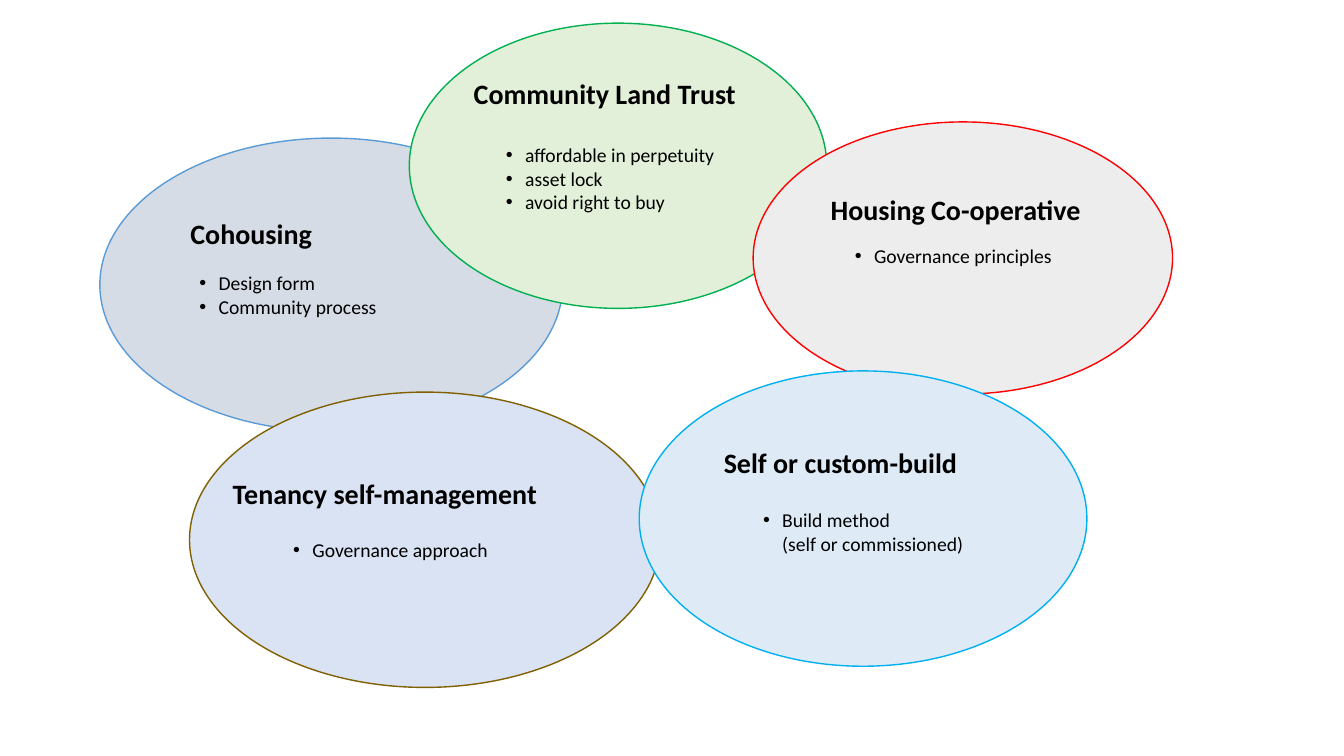
import copy
from dataclasses import dataclass

import lxml.etree
import pptx
import pptx.dml.color
import pptx.enum.shapes
import pptx.enum.text
import pptx.oxml.ns
import pptx.util

Inches = pptx.util.Inches
Pt = pptx.util.Pt
RGB = pptx.dml.color.RGBColor.from_string
qn = pptx.oxml.ns.qn


@dataclass(frozen=True)
class Theme:
    font: str = "Calibri"
    text: str = "000000"
    title_size: int = 20
    bullet_size: int = 14
    line_width: int = 1
    indent: float = 0.19
    cohousing: tuple = ("D6DCE5", "5B9BD5")
    land_trust: tuple = ("E2F0D9", "00B050")
    cooperative: tuple = ("EDEDED", "FF0000")
    tenancy: tuple = ("DAE3F3", "806000")
    self_build: tuple = ("DEEBF7", "00B0F0")


theme = Theme()


def add_text(shapes, box, lines, size, bold=False, bullet=False):
    """Add a text box with one paragraph per line; "\\v" breaks a line."""
    sp = shapes.add_textbox(*map(Inches, box))
    tf = sp.text_frame
    tf.word_wrap = True
    tf.auto_size = pptx.enum.text.MSO_AUTO_SIZE.NONE
    for i, line in enumerate(lines):
        p = tf.paragraphs[0] if i == 0 else tf.add_paragraph()
        p.text = line
        for r in p.runs:
            formats = {"name": theme.font, "size": Pt(size), "bold": bold}
            for name, value in formats.items():
                setattr(r.font, name, value)
            r.font.color.rgb = RGB(theme.text)
        # A line break takes the type size of the text around it
        for br in p._p.findall(qn("a:br")):
            br.append(copy.deepcopy(p.runs[0]._r.rPr))
        if bullet:
            pPr = p._p.get_or_add_pPr()
            pPr.set("marL", str(Inches(theme.indent)))
            pPr.set("indent", str(-Inches(theme.indent)))
            for tag, key, value in (("a:buFont", "typeface", "Arial"),
                                    ("a:buChar", "char", "•")):
                lxml.etree.SubElement(pPr, qn(tag)).set(key, value)


# Colours, ellipse, title, title box, bullets, bullet box; back to front
models = [
    (theme.cohousing, (0.99, 1.37, 4.59, 2.91),
     "Cohousing", (1.79, 2.1, 1.98, 0.61),
     ["Design form", "Community process"], (1.88, 2.64, 2.73, 0.87)),
    (theme.land_trust, (4.06, 0.23, 4.14, 2.83),
     "Community Land Trust", (4.6, 0.71, 3.63, 0.52),
     ["affordable in perpetuity", "asset lock", "avoid right to buy"],
     (4.92, 1.37, 3.07, 1.2)),
    (theme.cooperative, (7.47, 1.21, 4.16, 2.7),
     "Housing Co-operative", (8.14, 1.86, 3.02, 0.5),
     ["Governance principles"], (8.38, 2.37, 2.72, 0.48)),
    (theme.tenancy, (1.88, 3.89, 4.67, 2.93),
     "Tenancy self-management", (2.21, 4.68, 3.83, 0.56),
     ["Governance approach"], (2.81, 5.29, 3.02, 0.52)),
    (theme.self_build, (6.34, 3.68, 4.44, 2.93),
     "Self or custom-build", (7.08, 4.37, 3.01, 0.55),
     ["Build method \v(self or commissioned)"], (7.47, 4.99, 2.94, 0.88)),
]

prs = pptx.Presentation()
prs.slide_width, prs.slide_height = Inches(13.33), Inches(7.5)
s = prs.slides.add_slide(prs.slide_layouts[6])

for (fill, line), oval, title, title_box, bullets, bullet_box in models:
    shapes = s.shapes.add_group_shape().shapes
    sp = shapes.add_shape(pptx.enum.shapes.MSO_SHAPE.OVAL, *map(Inches, oval))
    sp.shadow.inherit = False
    sp.fill.solid()
    sp.fill.fore_color.rgb = RGB(fill)
    sp.line.color.rgb = RGB(line)
    sp.line.width = Pt(theme.line_width)
    add_text(shapes, title_box, [title], theme.title_size, bold=True)
    add_text(shapes, bullet_box, bullets, theme.bullet_size, bullet=True)

prs.save("out.pptx")
